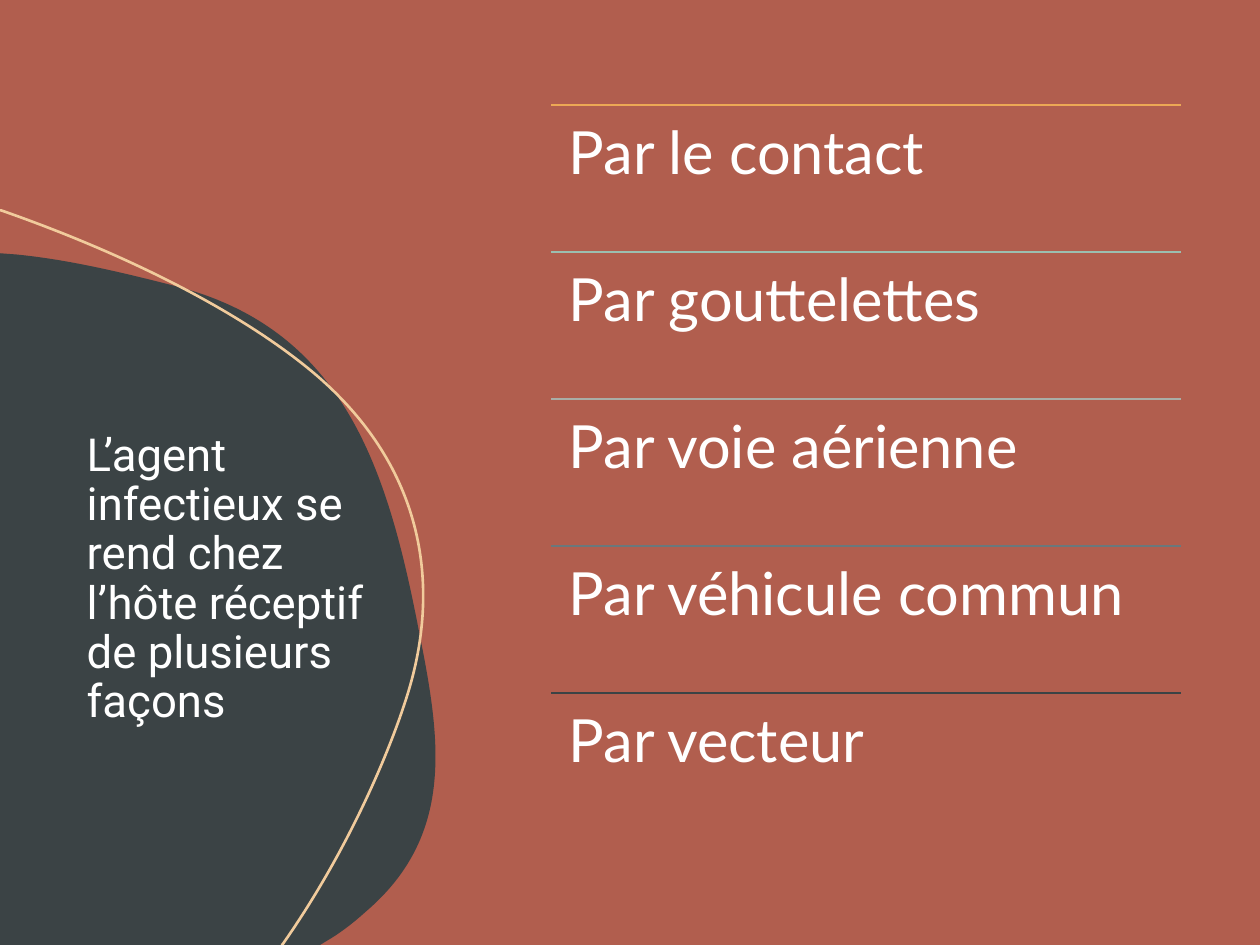
from lxml import etree
from pptx import Presentation
from pptx.dml.color import RGBColor
from pptx.enum.shapes import MSO_CONNECTOR, MSO_SHAPE
from pptx.enum.text import MSO_ANCHOR
from pptx.oxml.ns import qn
from pptx.util import Inches, Pt

STRAIGHT = MSO_CONNECTOR.STRAIGHT
RECTANGLE = MSO_SHAPE.RECTANGLE
TOP, BOTTOM = MSO_ANCHOR.TOP, MSO_ANCHOR.BOTTOM

RUST = RGBColor(0xB1, 0x5E, 0x4E)
SLATE = RGBColor(0x3B, 0x43, 0x45)
SAND = RGBColor(0xF1, 0xCB, 0x9C)
WHITE = RGBColor(0xFF, 0xFF, 0xFF)
AMBER = RGBColor(0xEC, 0xA8, 0x55)
SAGE = RGBColor(0x9B, 0xBF, 0xB0)
GREY = RGBColor(0xA9, 0xAE, 0xA7)
STEEL = RGBColor(0x6A, 0x78, 0x7C)

UNITS = 100
TITLE = "L’agent infectieux se rend chez l’hôte réceptif de plusieurs façons"
ROUTES = [
    ("Par le contact", AMBER),
    ("Par gouttelettes", SAGE),
    ("Par voie aérienne", GREY),
    ("Par véhicule commun", STEEL),
    ("Par vecteur", SLATE),
]

BLOB_BOUNDS = (0, 2.01, 3.46, 5.49)
BLOB_CURVES = [
    [(0, 2.01)],
    [(0.13, 2.02)],
    [(0.54, 2.06), (0.96, 2.16), (1.39, 2.27)],
    [(2.72, 2.61), (3.07, 3.7), (3.32, 4.98)],
    [(3.49, 5.83), (3.63, 6.61), (2.91, 7.23)],
    [(2.81, 7.32), (2.71, 7.4), (2.59, 7.47)],
    [(2.54, 7.5)],
    [(0, 7.5)],
    [(0, 2.01)],
]
ARC_BOUNDS = (0, 1.67, 3.36, 5.83)
ARC_CURVES = [
    [(0, 1.67)],
    [(0.01, 1.67)],
    [(1.04, 2.03), (1.93, 2.49), (2.49, 2.96)],
    [(3.33, 3.67), (3.49, 4.56), (3.27, 5.39)],
    [(3.17, 5.77), (2.83, 6.66), (2.24, 7.5)],
    [(2.23, 7.5)],
]


def add_outline(page, bounds, curves, closed):
    """Draw an outline of straight and cubic segments that fills the box."""
    left, top, width, height = (round(length * UNITS) for length in bounds)
    builder = page.shapes.build_freeform(left, top, scale=Inches(1) / UNITS)
    builder.add_line_segments([(left + width, top + height)], close=False)
    outline = builder.convert_to_shape()
    outline.shadow.inherit = False
    track = next(outline.element.spPr.iter(qn("a:path")))
    for step in list(track):
        track.remove(step)
    for index, curve in enumerate(curves):
        tag = "a:cubicBezTo" if len(curve) == 3 else "a:lnTo" if index else "a:moveTo"
        step = etree.SubElement(track, qn(tag))
        for x, y in curve:
            point = etree.SubElement(step, qn("a:pt"))
            point.set("x", str(round(x * UNITS) - left))
            point.set("y", str(round(y * UNITS) - top))
    if closed:
        etree.SubElement(track, qn("a:close"))
    return outline


def fill_plain(shape, color):
    """Give a shape a solid fill and no line."""
    shape.fill.solid()
    shape.fill.fore_color.rgb = color
    shape.line.fill.background()


def add_text(shapes, bounds, text, font, size, insets, anchor):
    """Place one wrapped white paragraph in the given box."""
    box = shapes.add_textbox(*(Inches(length) for length in bounds))
    frame = box.text_frame
    across, down = (Inches(inset) for inset in insets)
    frame_format = {
        "word_wrap": True,
        "vertical_anchor": anchor,
        "margin_left": across,
        "margin_right": across,
        "margin_top": down,
        "margin_bottom": down,
    }
    for name, value in frame_format.items():
        setattr(frame, name, value)
    para = frame.paragraphs[0]
    para.line_spacing = 0.9
    span = para.add_run()
    span.text = text
    for name, value in {"name": font, "size": Pt(size)}.items():
        setattr(span.font, name, value)
    span.font.color.rgb = WHITE


def add_rule(shapes, left, top, width, color):
    """Draw a thin horizontal line without shadow."""
    rule = shapes.add_connector(
        STRAIGHT, Inches(left), Inches(top), Inches(left + width), Inches(top)
    )
    rule.line.color.rgb = color
    rule.line.width = Pt(1)
    etree.SubElement(rule.element.spPr, qn("a:effectLst"))


def add_backdrop(page, bounds):
    """Cover the given box with the rust colour."""
    page.background.fill.solid()
    page.background.fill.fore_color.rgb = RUST
    backdrop = page.shapes.add_shape(RECTANGLE, *(Inches(length) for length in bounds))
    backdrop.shadow.inherit = False
    fill_plain(backdrop, RUST)


def add_title_panel(page, bounds):
    """Draw the dark blob, its sand arc and the title."""
    blob = add_outline(page, BLOB_BOUNDS, BLOB_CURVES, True)
    fill_plain(blob, SLATE)
    arc = add_outline(page, ARC_BOUNDS, ARC_CURVES, False)
    arc.fill.background()
    arc.line.color.rgb = SAND
    arc.line.width = Pt(1.5)
    add_text(page.shapes, bounds, TITLE, "Roboto", 26, (0.1, 0.05), BOTTOM)


def add_route_list(page, bounds):
    """Stack the transmission routes in equal rows, each under a rule."""
    left, top, width, height = bounds
    row_height = height / len(ROUTES)
    shapes = page.shapes.add_group_shape().shapes
    for index, (label, color) in enumerate(ROUTES):
        row_top = top + index * row_height
        row = (left, row_top, width, row_height)
        add_rule(shapes, left, row_top, width, color)
        add_text(shapes, row, label, "Lato", 34, (0.14, 0.14), TOP)


def main():
    """Build and save the slide."""
    deck = Presentation()
    deck.slide_width, deck.slide_height = Inches(10), Inches(7.5)
    page = deck.slides.add_slide(deck.slide_layouts[6])
    add_backdrop(page, (0, 0, 10, 7.5))
    add_title_panel(page, (0.59, 3.32, 2.5, 2.5))
    add_route_list(page, (35 / 8, 5 / 6, 5, 35 / 6))
    deck.save("out.pptx")


if __name__ == "__main__":
    main()
